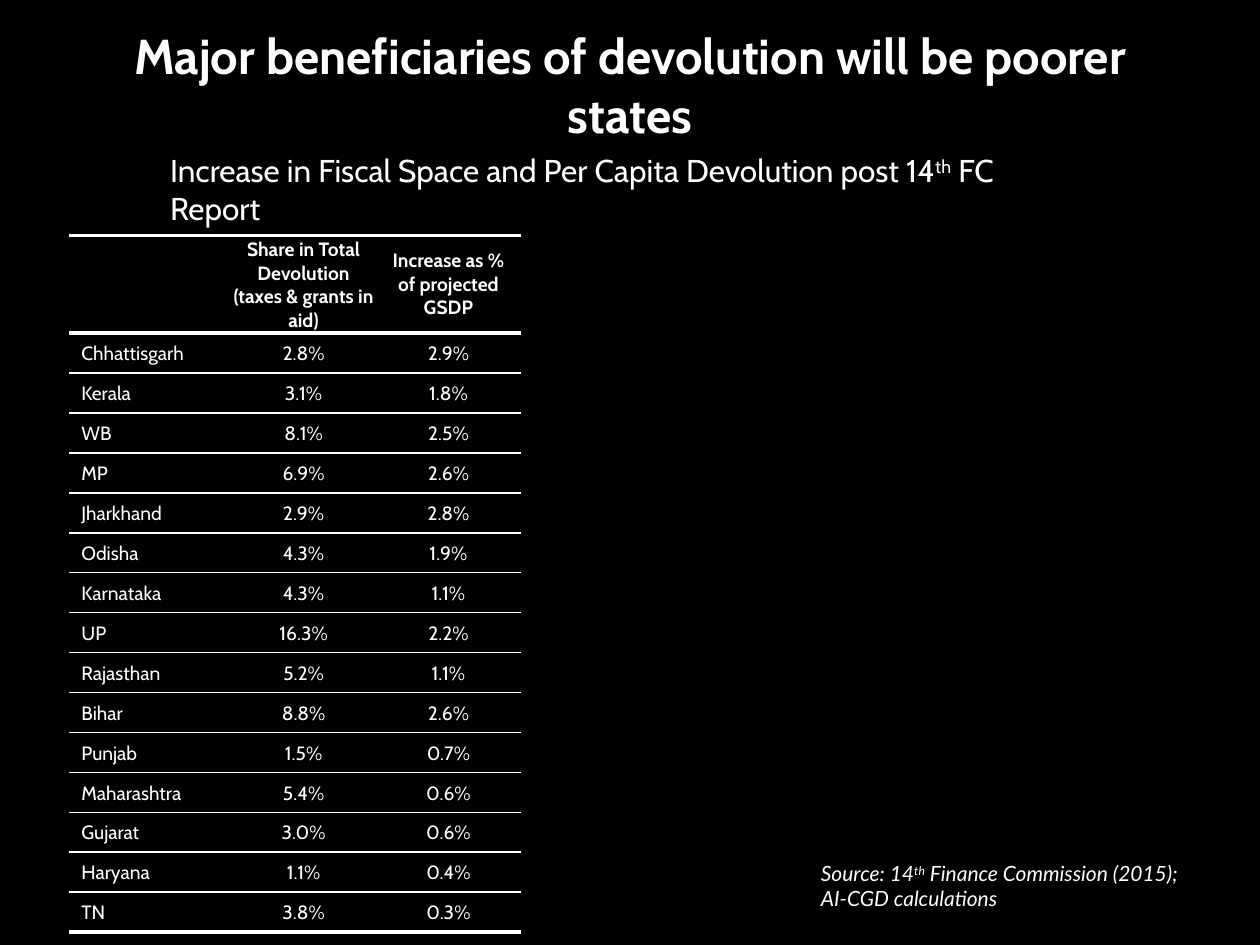
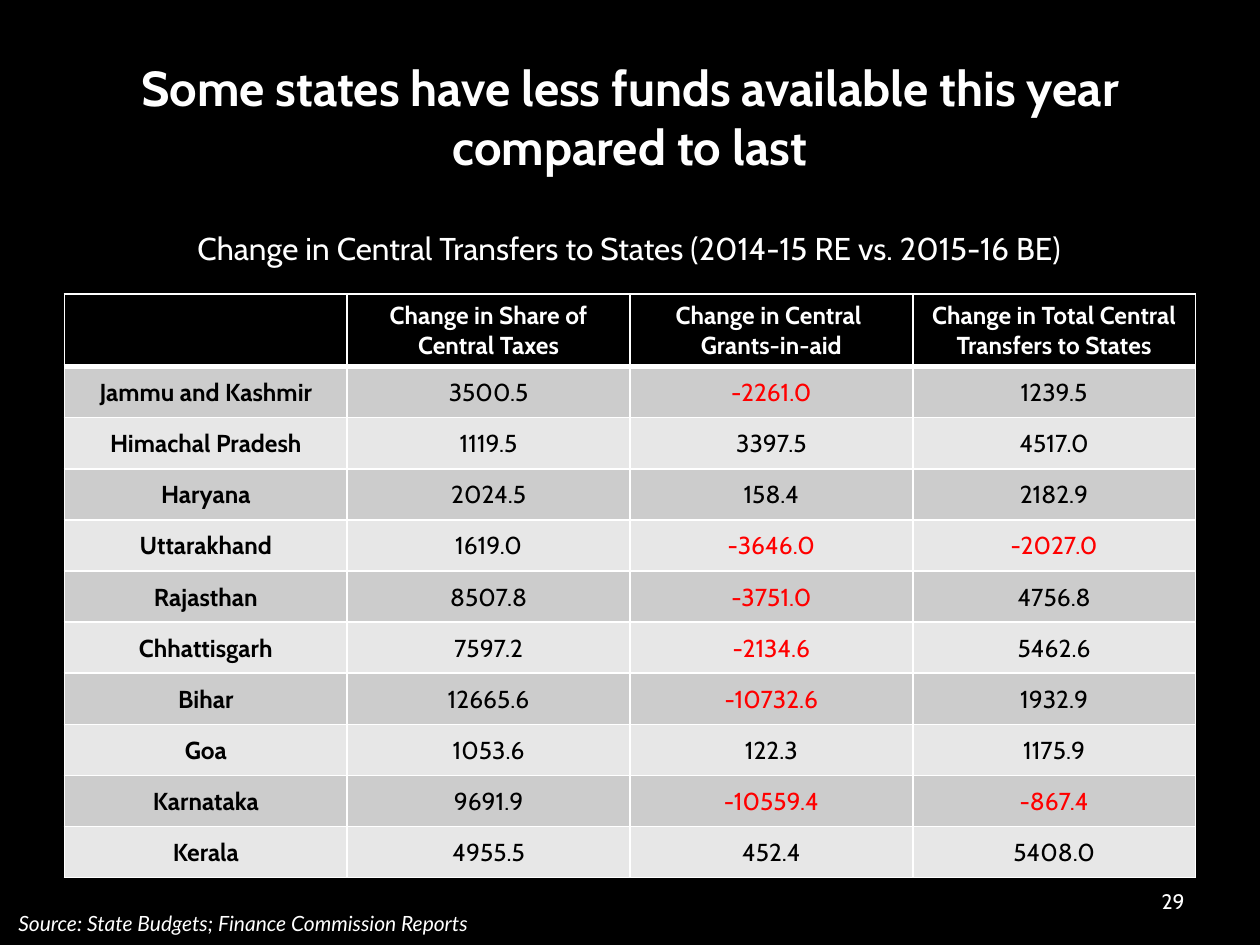
import pptx
import pptx.dml.color
import pptx.enum.shapes
import pptx.enum.text
import pptx.util
from lxml import etree

Cm = pptx.util.Cm
Pt = pptx.util.Pt
Align = pptx.enum.text.PP_ALIGN
Anchor = pptx.enum.text.MSO_ANCHOR
RECTANGLE = pptx.enum.shapes.MSO_SHAPE.RECTANGLE
hex_colour = pptx.dml.color.RGBColor.from_string

BLACK, WHITE, RED = "000000", "FFFFFF", "FF0000"
BANDS = ["CCCCCC", "E7E7E7"]
DRAWING = "http://schemas.openxmlformats.org/drawingml/2006/main"

# Text styles shared by both slides
STYLES = {
    "title": dict(size=28, bold=True, align=Align.CENTER, anchor=Anchor.MIDDLE),
    "subtitle": dict(size=18),
    "centred subtitle": dict(size=18, align=Align.CENTER),
    "source": dict(size=12, font="Lato", italic=True),
    "number": dict(size=12, align=Align.RIGHT, anchor=Anchor.MIDDLE),
}


def write(frame, text, size, font="Cabin", colour=WHITE, bold=False, italic=False,
          align=Align.LEFT, anchor=Anchor.TOP):
    """Fill a text frame; ^ switches superscript on and off, a newline breaks the line."""
    frame.word_wrap = True
    frame.vertical_anchor = anchor
    paragraph = frame.paragraphs[0]
    paragraph.alignment = align
    for line_index, line in enumerate(text.split("\n")):
        if line_index:
            paragraph.add_line_break()
        for part_index, part in enumerate(line.split("^")):
            run = paragraph.add_run()
            run.text = part
            run.font.name = font
            run.font.size = Pt(size)
            run.font.bold = bold
            run.font.italic = italic
            run.font.color.rgb = hex_colour(colour)
            if part_index % 2:
                run.font._element.set("baseline", "30000")


def style_cell(cell, fill, margins, borders):
    """Set fill, margins in cm and border widths in points (left, right, top, bottom)."""
    cell.margin_left, cell.margin_top, cell.margin_right, cell.margin_bottom = map(Cm, margins)
    cell.vertical_anchor = Anchor.MIDDLE
    properties = cell._tc.get_or_add_tcPr()
    for side, width in zip("LRTB", borders):
        line = etree.SubElement(properties, f"{{{DRAWING}}}ln{side}", w=str(Pt(width)))
        if width:
            solid = etree.SubElement(line, f"{{{DRAWING}}}solidFill")
            etree.SubElement(solid, f"{{{DRAWING}}}srgbClr", val=WHITE)
        else:
            etree.SubElement(line, f"{{{DRAWING}}}noFill")
    cell.fill.solid()
    cell.fill.fore_color.rgb = hex_colour(fill)


presentation = pptx.Presentation()
presentation.slide_width = Cm(25.4)
presentation.slide_height = Cm(19.05)
background = presentation.slide_master.background.fill
background.solid()
background.fore_color.rgb = hex_colour(BLACK)

devolution_rows = [
    ("", "Share in Total Devolution (taxes & grants in aid)", "Increase as % of projected GSDP"),
    ("Chhattisgarh", "2.8%", "2.9%"),
    ("Kerala", "3.1%", "1.8%"),
    ("WB", "8.1%", "2.5%"),
    ("MP", "6.9%", "2.6%"),
    ("Jharkhand", "2.9%", "2.8%"),
    ("Odisha", "4.3%", "1.9%"),
    ("Karnataka", "4.3%", "1.1%"),
    ("UP", "16.3%", "2.2%"),
    ("Rajasthan", "5.2%", "1.1%"),
    ("Bihar", "8.8%", "2.6%"),
    ("Punjab", "1.5%", "0.7%"),
    ("Maharashtra", "5.4%", "0.6%"),
    ("Gujarat", "3.0%", "0.6%"),
    ("Haryana", "1.1%", "0.4%"),
    ("TN", "3.8%", "0.3%"),
]
transfer_rows = [
    ("", "Change in Share of Central Taxes", "Change in Central \nGrants-in-aid",
     "Change in Total Central Transfers to States"),
    ("Jammu and Kashmir", "3500.5", "-2261.0", "1239.5"),
    ("Himachal Pradesh", "1119.5", "3397.5", "4517.0"),
    ("Haryana", "2024.5", "158.4", "2182.9"),
    ("Uttarakhand", "1619.0", "-3646.0", "-2027.0"),
    ("Rajasthan", "8507.8", "-3751.0", "4756.8"),
    ("Chhattisgarh", "7597.2", "-2134.6", "5462.6"),
    ("Bihar", "12665.6", "-10732.6", "1932.9"),
    ("Goa", "1053.6", "122.3", "1175.9"),
    ("Karnataka", "9691.9", "-10559.4", "-867.4"),
    ("Kerala", "4955.5", "452.4", "5408.0"),
]

# Each text: style, left, top, width, height, wording
slide_contents = [
    dict(
        texts=[
            ("title", 1.27, 0.12, 22.86, 3.18,
             "Major beneficiaries of devolution will be poorer states"),
            ("subtitle", 3.18, 2.92, 19.05, 1.02,
             "Increase in Fiscal Space and Per Capita Devolution post 14^th^ FC Report"),
        ],
        rows=devolution_rows, left=1.39, top=4.75, columns=[3.27, 2.92, 2.92],
        header_height=1.95, body_height=12.08,
    ),
    dict(
        texts=[
            ("title", 1.27, 0.76, 22.86, 3.18,
             "Some states have less funds available this year compared to last"),
            ("centred subtitle", 1.27, 4.5, 22.83, 1.02,
             "Change in Central Transfers to States (2014-15 RE vs. 2015-16 BE)"),
            ("source", 0.12, 18.24, 13.36, 0.76,
             "Source: State Budgets; Finance Commission Reports"),
            ("number", 18.21, 17.65, 5.92, 1.02, "29"),
        ],
        rows=transfer_rows, left=1.3, top=5.93, columns=[5.7] * 4,
        header_height=1.46, body_height=10.3,
    ),
]

tables = []
for content in slide_contents:
    slide = presentation.slides.add_slide(presentation.slide_layouts[6])
    for style, left, top, width, height, wording in content["texts"]:
        box = slide.shapes.add_textbox(Cm(left), Cm(top), Cm(width), Cm(height))
        write(box.text_frame, wording, **STYLES[style])
    rows, columns = content["rows"], content["columns"]
    body_count = len(rows) - 1
    heights = [content["header_height"]] + [content["body_height"] / body_count] * body_count
    table = slide.shapes.add_table(
        len(rows), len(columns), Cm(content["left"]), Cm(content["top"]),
        Cm(sum(columns)), Cm(sum(heights))).table
    table.horz_banding = False
    for column, width in zip(table.columns, columns):
        column.width = Cm(width)
    for row, height in zip(table.rows, heights):
        row.height = Cm(height)
    tables.append(table)

devolution_table, transfer_table = tables

source_panel = presentation.slides[0].shapes.add_shape(
    RECTANGLE, Cm(16.3), Cm(17.22), Cm(7.95), Cm(1.27))
source_panel.shadow.inherit = False
source_panel.fill.solid()
source_panel.fill.fore_color.rgb = hex_colour(BLACK)
source_panel.line.fill.background()
write(source_panel.text_frame, "Source: 14^th^ Finance Commission (2015); AI-CGD calculations",
      **STYLES["source"])

# Horizontal rules only, heavier around the header and at the foot
last_row = len(devolution_rows) - 1
for row_index, values in enumerate(devolution_rows):
    is_header = row_index == 0
    top_rule = 2.25 if row_index <= 1 else 1
    bottom_rule = 2.25 if row_index in (0, last_row) else 1
    for column_index, value in enumerate(values):
        is_state = column_index == 0
        if is_header:
            side = 0.13 if column_index == 2 else 0.03
            margins = (side, 0.05, side, 0.05)
        else:
            margins = (0.25 if is_state else 0.03, 0.03, 0.03, 0)
        cell = devolution_table.cell(row_index, column_index)
        style_cell(cell, BLACK, margins, (0, 0, top_rule, bottom_rule))
        if value:
            write(cell.text_frame, value, 11, bold=is_header, anchor=Anchor.MIDDLE,
                  align=Align.LEFT if is_state else Align.CENTER)

# Full grid with banded rows; falls are red
for row_index, values in enumerate(transfer_rows):
    is_header = row_index == 0
    fill = BLACK if is_header else BANDS[(row_index - 1) % 2]
    margins = (0.25, 0.13, 0.25, 0.13) if is_header else (0.03, 0.03, 0.03, 0)
    borders = (1, 1, 3 if row_index == 1 else 1, 3 if is_header else 1)
    for column_index, value in enumerate(values):
        cell = transfer_table.cell(row_index, column_index)
        style_cell(cell, fill, margins, borders)
        colour = WHITE if is_header else RED if value.startswith("-") else BLACK
        if value:
            write(cell.text_frame, value, 14, colour=colour, align=Align.CENTER,
                  bold=is_header or column_index == 0, anchor=Anchor.MIDDLE)

presentation.save("out.pptx")
